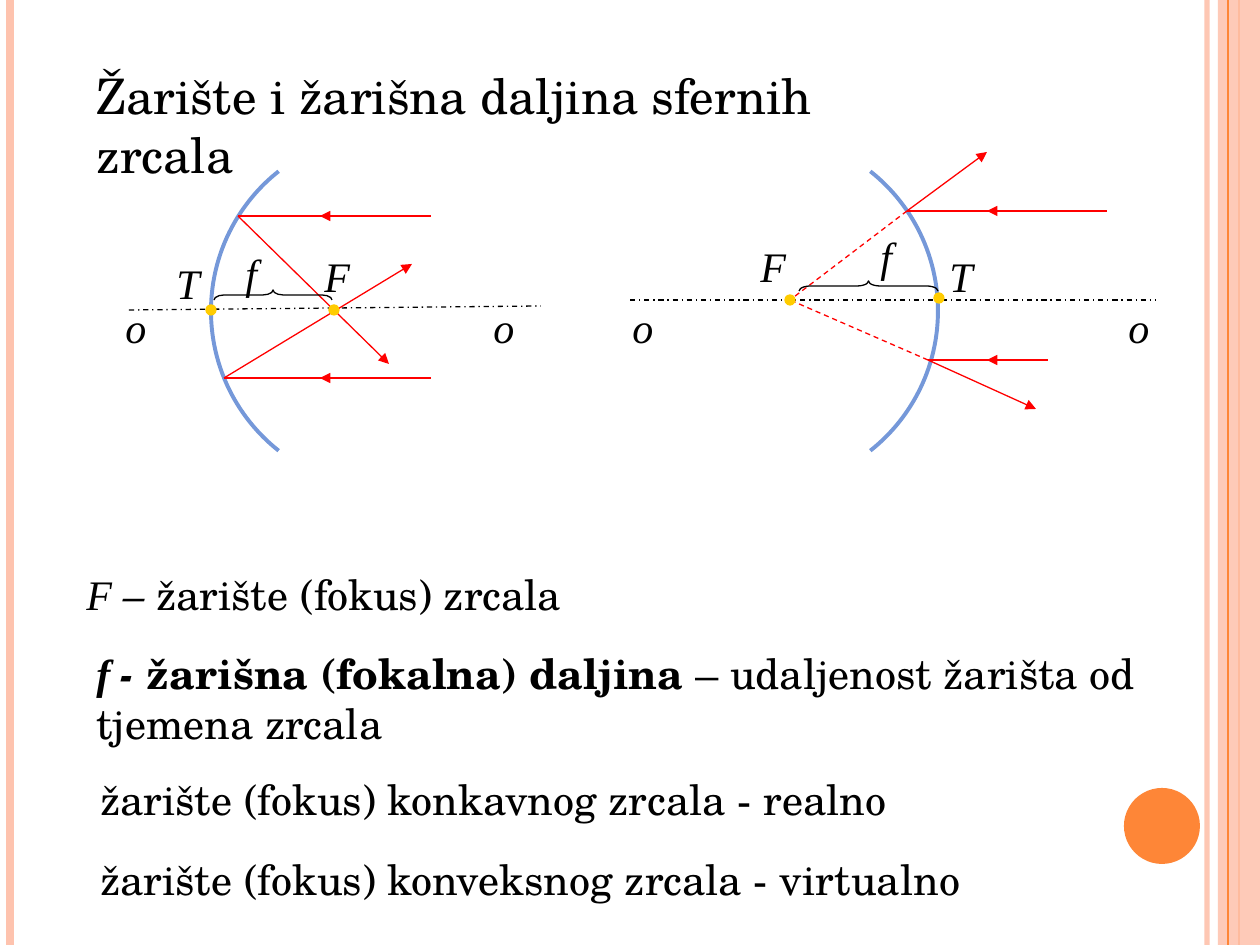
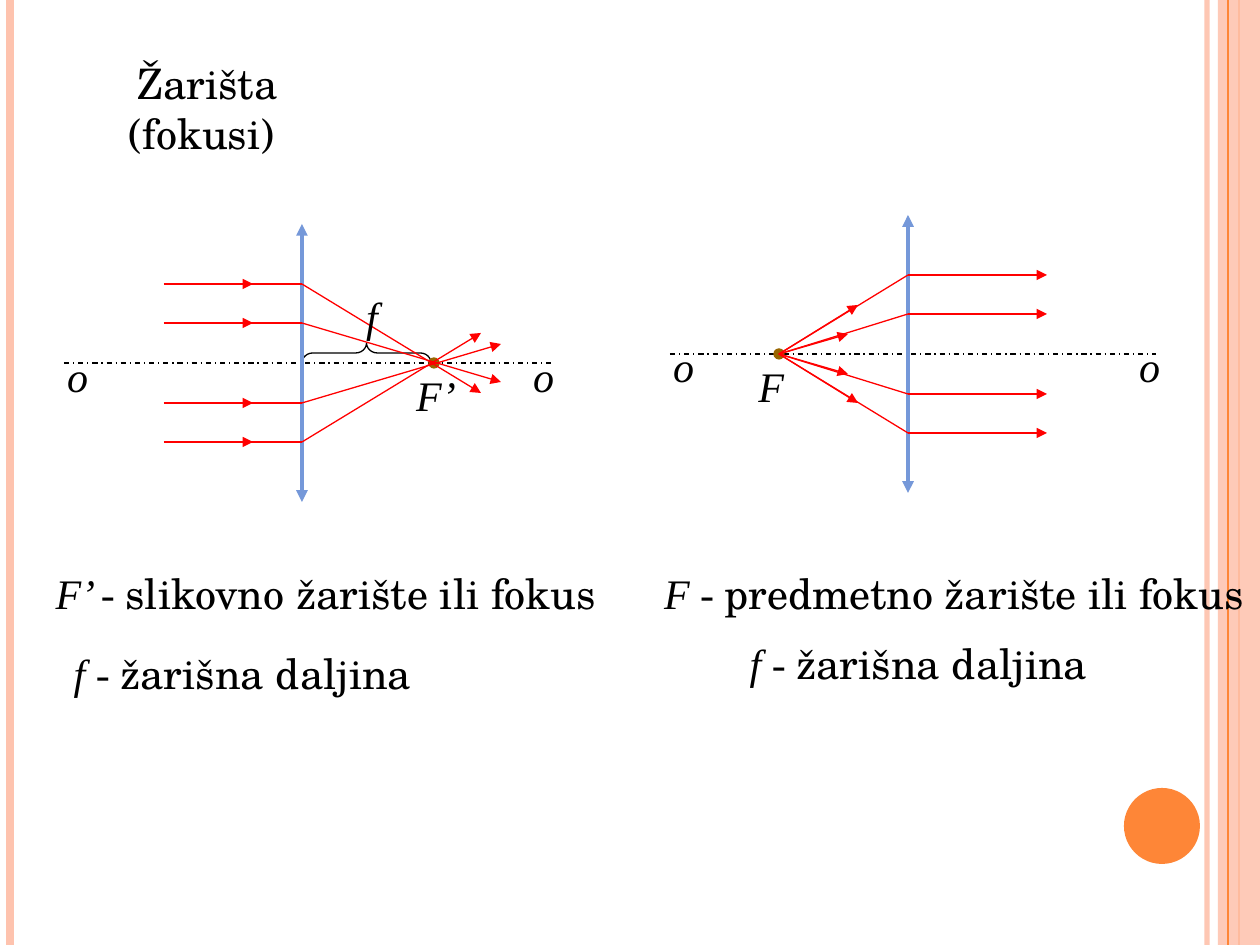
"""Build two slides on the focal points of spherical mirrors and thin lenses."""
from lxml.etree import SubElement
from pptx import Presentation
from pptx.dml.color import RGBColor
from pptx.enum.dml import MSO_LINE as Dash
from pptx.enum.shapes import MSO_CONNECTOR as Connector, MSO_SHAPE as Shape
from pptx.enum.text import MSO_ANCHOR as Anchor, MSO_AUTO_SIZE as AutoSize, PP_ALIGN as Align
from pptx.oxml.ns import qn
from pptx.util import Pt

SERIF, SCHOOL = "Times New Roman", "TeX Gyre Schola"
BLACK, RED, BLUE = "000000", "FF0000", "7598D9"
PEACH, ORANGE, YELLOW, BROWN = "FEC3AE", "FE8637", "FFCC00", "996600"
WIDTH, HEIGHT = 1260, 945


def px(length):
    return round(length * 914400 / 126)


def rgb(code):
    return RGBColor.from_string(code)


def set_alpha(parent, percent):
    color = next(parent.iter(qn("a:srgbClr")))
    SubElement(color, qn("a:alpha")).set("val", str(percent * 1000))


class Slides:
    def __init__(self):
        self.deck = Presentation()
        self.deck.slide_width, self.deck.slide_height = px(WIDTH), px(HEIGHT)

    def new_page(self, title, size, place, align, anchor):
        self.page = self.deck.slides.add_slide(self.deck.slide_layouts[5])
        self.align, self.anchor = align, anchor
        box = self.page.shapes.title
        box.left, box.top, box.width, box.height = map(px, place)
        self.add_runs(box.text_frame, [(title, SCHOOL, "")], size, True, AutoSize.NONE)
        self.draw_bands()

    def draw_bands(self):
        self.line((1207, 0), (1207, HEIGHT), PEACH, 3, alpha=93)
        self.line((10, 0), (10, HEIGHT), PEACH, 4.5)
        self.line((1239, 0), (1239, HEIGHT), ORANGE, 1.5)
        self.shape(Shape.RECTANGLE, (1218, 0, 42, HEIGHT), fill=PEACH, alpha=87)
        self.line((1228, 0), (1228, HEIGHT), ORANGE)
        self.shape(Shape.OVAL, (1124, 788, 76, 76), fill=ORANGE)

    def add_runs(self, frame, runs, size, wrap, auto_size):
        frame.word_wrap, frame.auto_size = wrap, auto_size
        frame.vertical_anchor = self.anchor
        para = frame.paragraphs[0]
        para.alignment = self.align
        for text, font, style in runs:
            span = para.add_run()
            span.text = text
            span.font.name, span.font.size = font, Pt(size)
            span.font.bold, span.font.italic = "b" in style, "i" in style
            span.font.color.rgb = rgb(BLACK)

    def text(self, place, *runs, wrap=False):
        box = self.page.shapes.add_textbox(*map(px, place))
        self.add_runs(box.text_frame, runs, 24, wrap, AutoSize.SHAPE_TO_FIT_TEXT)

    def label(self, letter, left, top, width=48):
        self.text((left, top, width, 63), (letter, SERIF, "i"))

    def shape(self, kind, place, fill=None, line=None, weight=0.75, alpha=None, adjust=()):
        shape = self.page.shapes.add_shape(kind, *map(px, place))
        shape.shadow.inherit = False
        for index, value in enumerate(adjust):
            shape.adjustments[index] = value
        if fill:
            shape.fill.solid()
            shape.fill.fore_color.rgb = rgb(fill)
        else:
            shape.fill.background()
        if line:
            shape.line.color.rgb, shape.line.width = rgb(line), Pt(weight)
        else:
            shape.line.fill.background()
        if alpha:
            set_alpha(shape.element, alpha)
        return shape

    def line(self, start, end, color=RED, weight=0.75, dash=None, ends=(), alpha=None):
        line = self.page.shapes.add_connector(Connector.STRAIGHT, *map(px, start + end))
        line.line.color.rgb, line.line.width = rgb(color), Pt(weight)
        if dash:
            line.line.dash_style = dash
        outline = line.get_or_add_ln()
        if alpha:
            set_alpha(outline, alpha)
        for end_name in ends:
            SubElement(outline, qn(f"a:{end_name}")).set("type", "triangle")
        SubElement(line.element.spPr, qn("a:effectLst"))

    def arrow(self, start, end):
        self.line(start, end, ends=["tailEnd"])

    def ray(self, start, tip, end):
        self.line(start, end)
        self.arrow(start, tip)

    def axis(self, start, end):
        self.line(start, end, BLACK, dash=Dash.DASH_DOT)

    def lens(self, x, axis_y):
        self.line((x, axis_y - 139), (x, axis_y + 139), BLUE, 2.25, ends=["headEnd", "tailEnd"])

    def mirror(self, center_x, center_y, first_degree, last_degree):
        radius = 178
        place = (center_x - radius, center_y - radius, 2 * radius, 2 * radius)
        self.shape(Shape.ARC, place, line=BLUE, weight=2.25,
                   adjust=[degree * 0.6 for degree in (first_degree, last_degree)])

    def dot(self, x, y, color):
        self.shape(Shape.OVAL, (x - 5, y - 5, 10, 10), fill=color, line=color)

    def brace(self, left, right, middle, depth, curl):
        span = right - left
        place = ((left + right - depth) / 2, middle - span / 2, depth, span)
        self.shape(Shape.LEFT_BRACE, place, line=BLACK, adjust=(curl, 0.5)).rotation = 90


def build_mirrors(slides):
    slides.new_page("Žarište i žarišna daljina sfernih zrcala", 28, (84, 59, 833, 72),
                    Align.LEFT, Anchor.TOP)
    slides.mirror(389, 311, 128.3, 231.7)
    slides.axis((129, 310), (541, 306))
    for start, tip, hit, end in (((431, 216), (320, 216), (238, 216), (389, 364)),
                                 ((431, 378), (320, 378), (224, 378), (412, 264))):
        slides.ray(start, tip, hit)
        slides.arrow(hit, end)
    slides.brace(214, 332, 295, 10, 1.01)

    slides.mirror(760, 311, 308.3, 51.7)
    slides.axis((630, 300), (1156, 300))
    focus = (790, 300)
    for start, tip, hit, end in (((1107, 211), (987, 211), (907, 211), (987, 152)),
                                 ((1048, 360), (987, 360), (928, 360), (1036, 409))):
        slides.ray(start, tip, hit)
        slides.line(hit, focus, dash=Dash.DASH)
        slides.arrow(hit, end)
    slides.brace(799, 938, 286, 10, 1.15)

    for x, y in ((211, 310), (334, 310), focus, (939, 298)):
        slides.dot(x, y, YELLOW)
    for left in (113, 481, 620, 1116):
        slides.label("o", left, 295)
    for letter, left, top in (("T", 164, 251), ("F", 312, 244), ("f", 233, 241),
                              ("F", 748, 234), ("f", 868, 224), ("T", 937, 244)):
        slides.label(letter, left, top, 37 if letter == "f" else 50)

    slides.text((74, 562, 517, 63), ("F", SERIF, "i"), (" – ", SCHOOL, "i"),
                ("žarište (fokus) zrcala", SCHOOL, ""))
    slides.text((84, 641, 1097, 115), ("f ", SERIF, "bi"), ("- ", SCHOOL, "bi"),
                ("žarišna (fokalna) daljina ", SCHOOL, "b"),
                ("– udaljenost žarišta od tjemena zrcala", SCHOOL, ""), wrap=True)
    slides.text((88, 767, 833, 63), ("žarište (fokus) konkavnog zrcala - realno", SCHOOL, ""))
    slides.text((88, 847, 908, 63), ("žarište (fokus) konveksnog zrcala - virtualno", SCHOOL, ""))


def build_lenses(slides):
    slides.new_page("Žarišta (fokusi) ", 24, (50, 76, 315, 63), Align.CENTER, Anchor.MIDDLE)
    image_y, object_y = 363, 354
    image_x, object_x = 302, 908
    focus = (779, object_y)
    slides.brace(302, 431, 353, 20, 0.54)
    slides.axis((64, image_y), (551, image_y))
    slides.axis((670, object_y), (1156, object_y))
    slides.lens(image_x, image_y)
    slides.lens(object_x, object_y)
    slides.dot(434, image_y, BROWN)
    slides.dot(*focus, BROWN)
    for side in (-1, 1):
        for offset, reach, spread, tip_x, tip_rise in ((40, 501, 19, 848, 20),
                                                       (79, 481, 30, 858, 49)):
            y = image_y + side * offset
            slides.ray((164, y), (253, y), (image_x, y))
            slides.arrow((image_x, y), (reach, image_y - side * spread))
            y = object_y + side * offset
            slides.ray(focus, (tip_x, object_y + side * tip_rise), (object_x, y))
            slides.arrow((object_x, y), (1047, y))

    for letter, left, top, width in (("f", 348, 284, 48), ("o", 54, 344, 47), ("o", 520, 344, 47),
                                     ("F’", 403, 363, 66), ("o", 660, 334, 47),
                                     ("o", 1126, 334, 47), ("F", 746, 354, 50)):
        slides.label(letter, left, top, width)
    for letter, meaning, left, width in (("F’", "slikovno", 39, 573), ("F", "predmetno", 648, 612)):
        slides.text((left, 561, width, 63), (f"{letter} - ", SERIF, "i"),
                    (f"{meaning} žarište ili fokus", SCHOOL, ""))
    for left, top in ((54, 641), (730, 631)):
        slides.text((left, top, 377, 63), ("f", SERIF, "i"), (" - ", SERIF, ""),
                    ("žarišna daljina", SCHOOL, ""))


def main():
    slides = Slides()
    build_mirrors(slides)
    build_lenses(slides)
    slides.deck.save("out.pptx")


if __name__ == "__main__":
    main()
